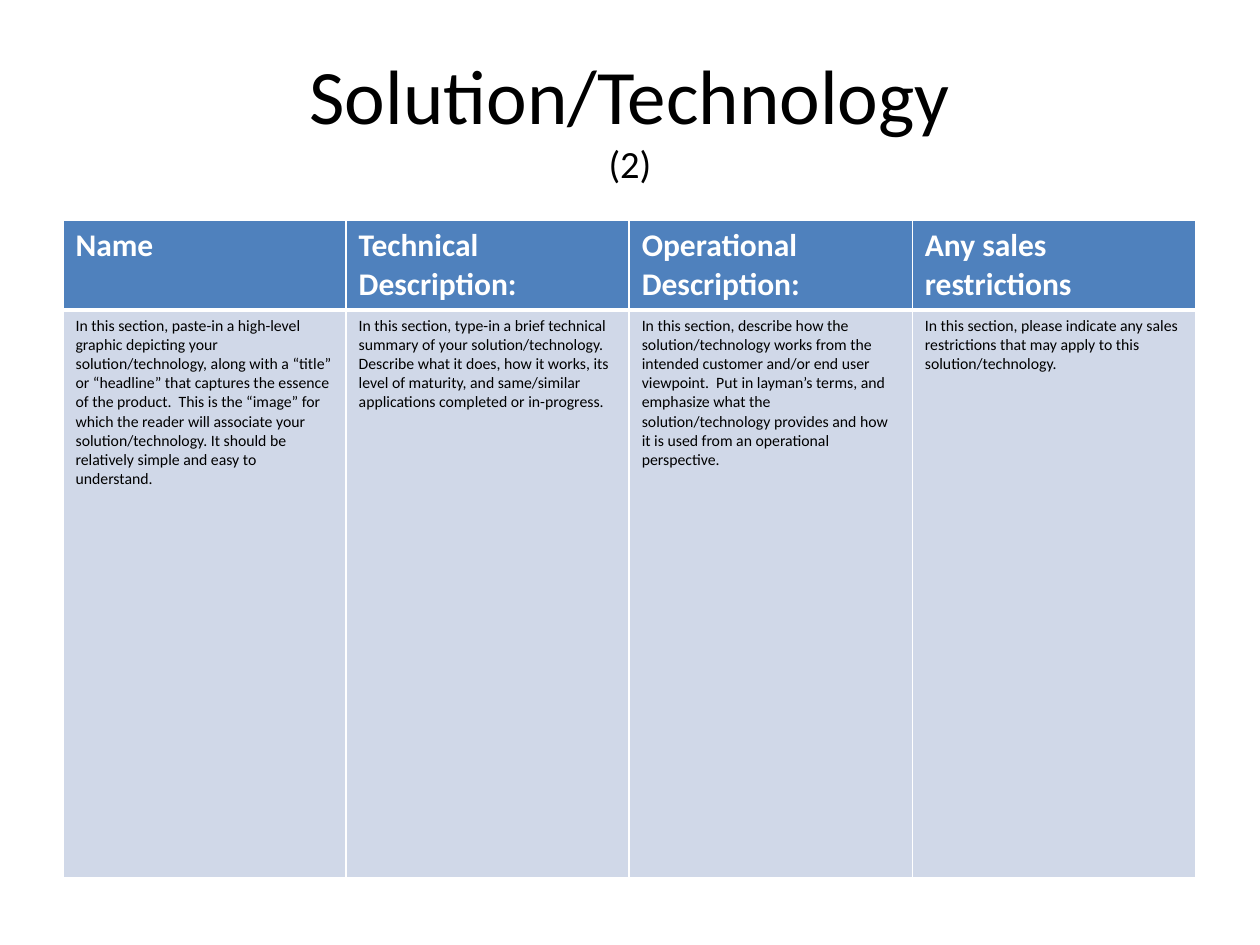
from lxml.etree import SubElement
from pptx import Presentation
from pptx.dml.color import RGBColor
from pptx.enum.text import MSO_ANCHOR, PP_ALIGN
from pptx.oxml.ns import qn
from pptx.util import Pt

COLUMNS = [
    ("Name",
     "In this section, paste-in a high-level graphic depicting your solution/technology, "
     "along with a “title” or “headline” that captures the essence of the product.  "
     "This is the “image” for which the reader will associate your solution/technology. "
     "It should be relatively simple and easy to understand."),
    ("Technical Description:",
     "In this section, type-in a brief technical summary of your solution/technology.  "
     "Describe what it does, how it works, its level of maturity, and same/similar "
     "applications completed or in-progress."),
    ("Operational Description:",
     "In this section, describe how the solution/technology works from the intended "
     "customer and/or end user viewpoint.  Put in layman’s terms, and emphasize what the "
     "solution/technology provides and how it is used from an operational perspective."),
    ("Any sales restrictions",
     "In this section, please indicate any sales restrictions that may apply to this "
     "solution/technology."),
]


def color(value):
    return RGBColor.from_string(value)


def add_text(para, text, size, ink="000000", bold=False, font="Calibri"):
    span = para.add_run()
    span.text = text
    span.font.name = font
    span.font.size = Pt(size)
    span.font.bold = bold
    span.font.color.rgb = color(ink)


class SlideBuilder:
    header_fill = "4F81BD"
    body_fill = "D0D8E8"
    white = "FFFFFF"

    def __init__(self, page):
        self.page = page

    def title(self, heading, number, left, top, width, height):
        box = self.page.shapes.title
        box.left, box.top, box.width, box.height = map(Pt, (left, top, width, height))
        frame = box.text_frame
        frame.vertical_anchor = MSO_ANCHOR.MIDDLE
        para = frame.paragraphs[0]
        para.alignment = PP_ALIGN.CENTER
        add_text(para, heading, 44)
        para.add_line_break()
        add_text(para, number, 22)

    def borders(self, cell, **widths):
        properties = cell._tc.get_or_add_tcPr()
        for side in "LRTB":
            line = SubElement(properties, qn(f"a:ln{side}"), w=str(Pt(widths.get(side, 1))))
            fill = SubElement(line, qn("a:solidFill"))
            SubElement(fill, qn("a:srgbClr"), val=self.white)

    def cell(self, cell, text, fill, bottom=1, **style):
        # Borders come before the fill in the cell properties
        self.borders(cell, B=bottom)
        cell.fill.solid()
        cell.fill.fore_color.rgb = color(fill)
        add_text(cell.text_frame.paragraphs[0], text, **style)

    def table(self, columns, left, top, column_width, row_heights):
        frame = self.page.shapes.add_table(
            len(row_heights), len(columns), Pt(left), Pt(top),
            Pt(column_width * len(columns)), Pt(sum(row_heights)))
        table = frame.table
        for row, height in zip(table.rows, row_heights):
            row.height = Pt(height)
        for index, (heading, body) in enumerate(columns):
            table.columns[index].width = Pt(column_width)
            self.cell(table.cell(0, index), heading, self.header_fill,
                      bottom=3, size=18, ink=self.white, bold=True)
            self.cell(table.cell(1, index), body, self.body_fill, size=9)
            # Both rows share the thick line below the header
            shared = table.cell(1, index)._tc.tcPr.find(qn("a:lnT"))
            shared.set("w", str(Pt(3)))


def main():
    deck = Presentation()
    deck.slide_width, deck.slide_height = Pt(720), Pt(540)
    builder = SlideBuilder(deck.slides.add_slide(deck.slide_layouts[5]))

    # Title
    builder.title("Solution/Technology", "(2)", 36, 21.6, 648, 90)

    # Description table
    builder.table(COLUMNS, 36, 126, 161.8, (50.6, 324.7))

    deck.save("out.pptx")


if __name__ == "__main__":
    main()
